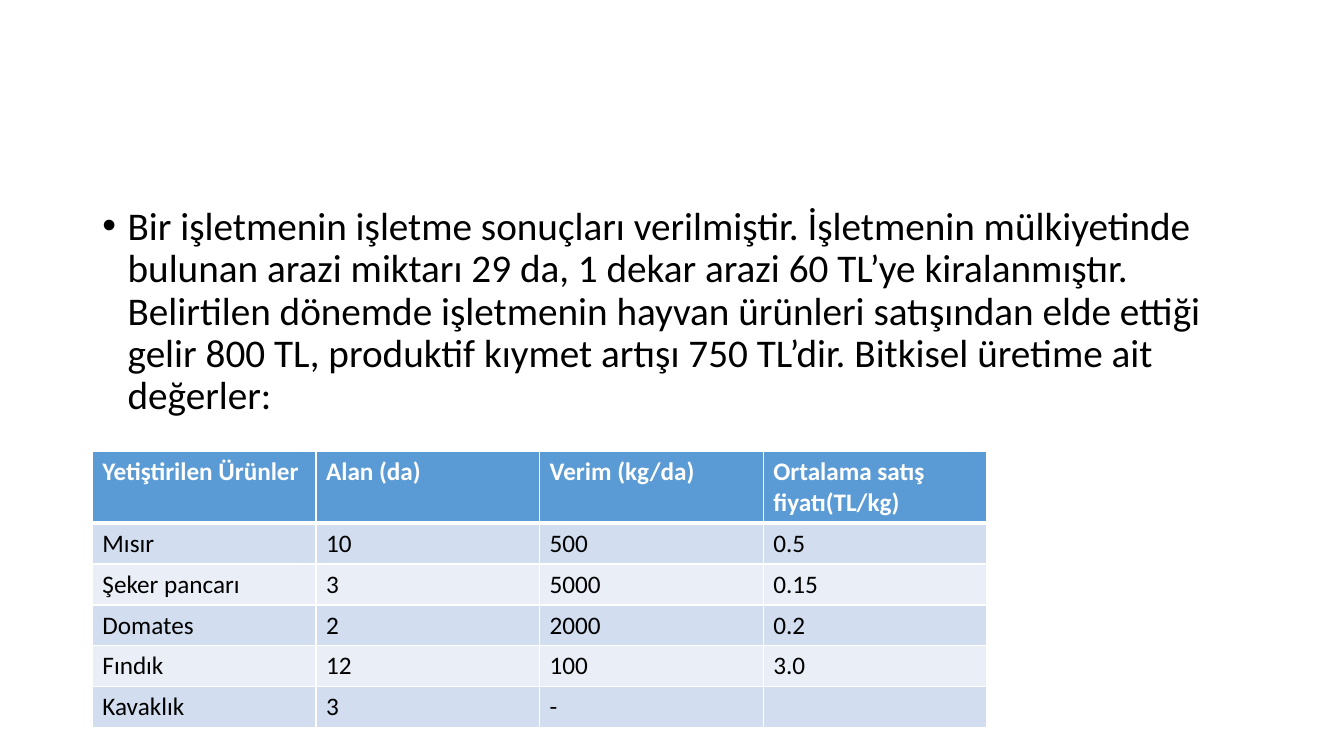
from dataclasses import dataclass

from lxml.etree import SubElement
from pptx import Presentation
from pptx.dml.color import RGBColor
from pptx.enum.text import MSO_AUTO_SIZE
from pptx.oxml.ns import qn
from pptx.slide import Slide
from pptx.table import _Cell
from pptx.text.text import _Paragraph
from pptx.util import Pt

PX = 9525  # EMU per px, at 96 px to the inch
FONT = "Calibri"
BLACK = RGBColor(0x00, 0x00, 0x00)
WHITE = RGBColor(0xFF, 0xFF, 0xFF)
HEADER_BLUE = RGBColor(0x5B, 0x9B, 0xD5)
BAND_DARK = RGBColor(0xD2, 0xDE, 0xEF)
BAND_LIGHT = RGBColor(0xEA, 0xEF, 0xF7)

LEFT = 88
COLUMN_WIDTH = 213
ROW_HEIGHT = 39
BULLET_INDENT = 24

QUESTION = (
    "Bir işletmenin işletme sonuçları verilmiştir. İşletmenin mülkiyetinde "
    "bulunan arazi miktarı 29 da, 1 dekar arazi 60 TL’ye kiralanmıştır. "
    "Belirtilen dönemde işletmenin hayvan ürünleri satışından elde ettiği "
    "gelir 800 TL, produktif kıymet artışı 750 TL’dir. Bitkisel üretime ait "
    "değerler:"
)
CROP_ROWS = [
    ("Yetiştirilen Ürünler", "Alan (da)", "Verim (kg/da)", "Ortalama satış fiyatı(TL/kg)"),
    ("Mısır", "10", "500", "0.5"),
    ("Şeker pancarı", "3", "5000", "0.15"),
    ("Domates", "2", "2000", "0.2"),
    ("Fındık", "12", "100", "3.0"),
    ("Kavaklık", "3", "-", ""),
]


@dataclass(frozen=True)
class RowStyle:
    fill: RGBColor
    color: RGBColor
    bold: bool
    top: int
    bottom: int


def row_style(row: int) -> RowStyle:
    if row == 0:
        return RowStyle(HEADER_BLUE, WHITE, True, 1, 3)
    band = BAND_DARK if row % 2 else BAND_LIGHT
    return RowStyle(band, BLACK, False, 3 if row == 1 else 1, 1)


def format_runs(paragraph: _Paragraph, size: int, color: RGBColor, bold: bool = False) -> None:
    for span in paragraph.runs:
        span.font.name = FONT
        span.font.size = Pt(size)
        span.font.bold = bold
        span.font.color.rgb = color


def add_borders(cell: _Cell, style: RowStyle) -> None:
    """Draw white cell borders; call before filling, as lines precede the fill."""
    properties = cell._tc.get_or_add_tcPr()
    widths = {"lnL": 1, "lnR": 1, "lnT": style.top, "lnB": style.bottom}
    for side, width in widths.items():
        line = SubElement(properties, qn(f"a:{side}"), w=str(Pt(width)))
        fill = SubElement(line, qn("a:solidFill"))
        SubElement(fill, qn("a:srgbClr"), val=str(WHITE))


def fill_question(slide: Slide) -> None:
    body = slide.placeholders[1]
    body.left, body.top = LEFT * PX, 192 * PX
    body.width, body.height = 1104 * PX, 457 * PX
    frame = body.text_frame
    frame.text = QUESTION
    frame.auto_size = MSO_AUTO_SIZE.NONE
    paragraph = frame.paragraphs[0]
    paragraph.line_spacing = 0.9
    paragraph.space_before = Pt(10)
    properties = paragraph._p.get_or_add_pPr()
    properties.set("marL", str(BULLET_INDENT * PX))
    properties.set("indent", str(-BULLET_INDENT * PX))
    format_runs(paragraph, 28, BLACK)


def add_crop_table(slide: Slide) -> None:
    row_count, column_count = len(CROP_ROWS), len(CROP_ROWS[0])
    table = slide.shapes.add_table(
        row_count, column_count, LEFT * PX, 430 * PX,
        column_count * COLUMN_WIDTH * PX, row_count * ROW_HEIGHT * PX,
    ).table
    for row, texts in enumerate(CROP_ROWS):
        style = row_style(row)
        for column, text in enumerate(texts):
            cell = table.cell(row, column)
            cell.text_frame.text = text
            add_borders(cell, style)
            cell.fill.solid()
            cell.fill.fore_color.rgb = style.fill
            format_runs(cell.text_frame.paragraphs[0], 18, style.color, style.bold)


def main() -> None:
    deck = Presentation()
    deck.slide_width, deck.slide_height = 1280 * PX, 720 * PX
    slide = deck.slides.add_slide(deck.slide_layouts.get_by_name("Title and Content"))
    title = slide.shapes.title.element
    title.getparent().remove(title)
    fill_question(slide)
    add_crop_table(slide)
    deck.save("out.pptx")


if __name__ == "__main__":
    main()
